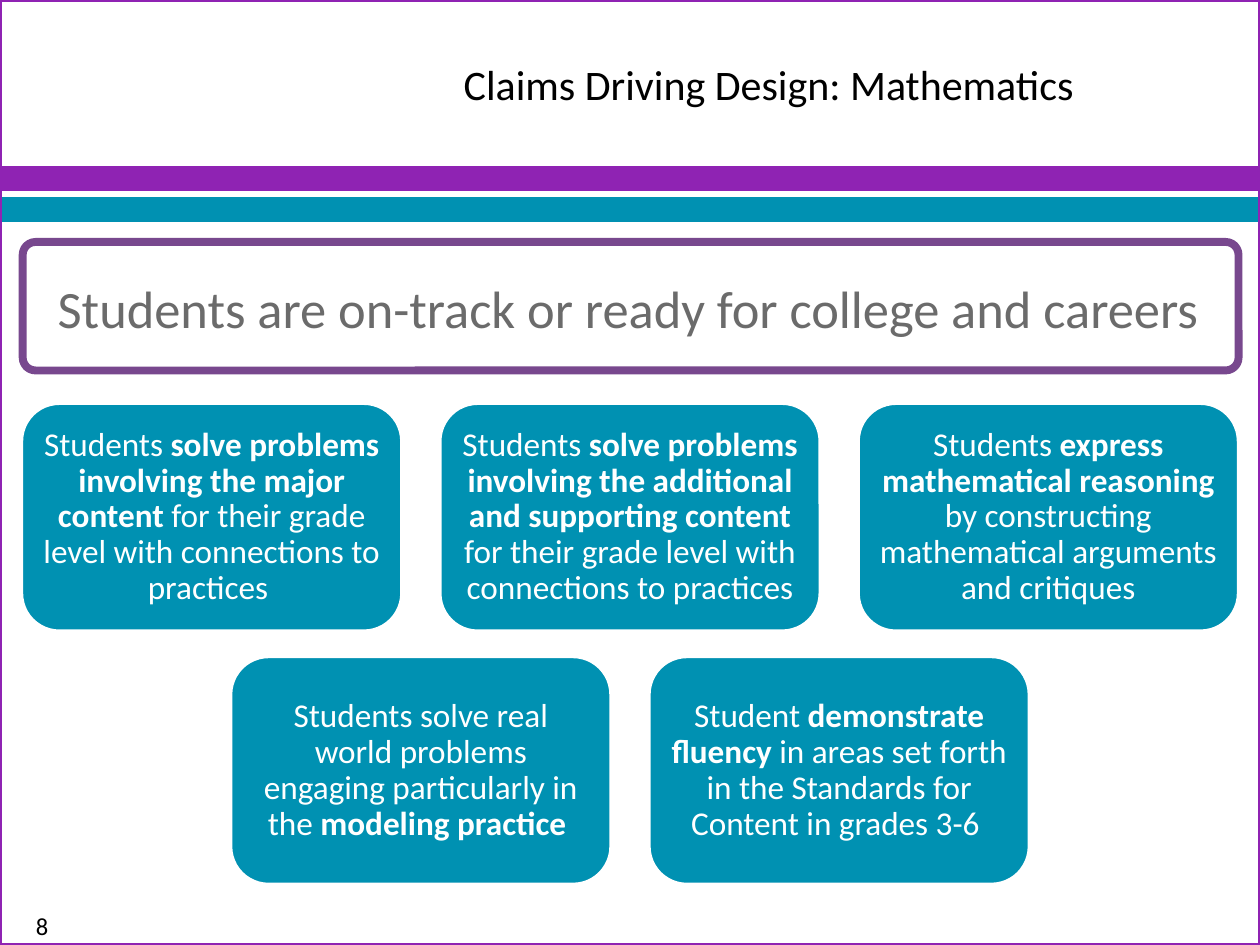
import pptx
import pptx.dml.color
import pptx.enum.shapes
import pptx.enum.text
import pptx.util

WIDTH, HEIGHT = 10, 7.5
PURPLE, TEAL, WHITE, BLACK = "8F23B3", "0091B2", "FFFFFF", "000000"
CARD_WIDTH, CARD_HEIGHT = 3.02, 1.81
COLUMN_STEP, ROW_STEP = 3.32, 2.01
CARDS_TOP = 3.2

CLAIM_ROWS = [
    [
        "Students **solve problems involving the major content **"
        "for their grade level with connections to practices ",
        "Students **solve problems involving the additional and supporting content **"
        "for their grade level with connections to practices",
        "Students **express mathematical reasoning **"
        "by constructing mathematical arguments and critiques",
    ],
    [
        "Students solve real world problems engaging particularly in the **modeling practice **",
        "Student **demonstrate fluency **in areas set forth in the Standards for Content in grades 3-6 ",
    ],
]


def color(code):
    return pptx.dml.color.RGBColor.from_string(code)


def inches(*lengths):
    return [pptx.util.Inches(length) for length in lengths]


def write(box, text, size, ink, align="CENTER", anchor="MIDDLE", spacing=1.0,
          insets=(0.1, 0.05, 0.1, 0.05)):
    frame = box.text_frame
    frame.word_wrap = True
    frame.vertical_anchor = pptx.enum.text.MSO_ANCHOR[anchor]
    (frame.margin_left, frame.margin_top,
     frame.margin_right, frame.margin_bottom) = inches(*insets)
    paragraph = frame.paragraphs[0]
    paragraph.alignment = pptx.enum.text.PP_ALIGN[align]
    paragraph.line_spacing = spacing
    for index, part in enumerate(text.split("**")):
        if part:
            run = paragraph.add_run()
            run.text = part
            run.font.name = "Calibri"
            run.font.size = pptx.util.Pt(size)
            run.font.bold = index % 2 == 1
            run.font.color.rgb = color(ink)


def add_panel(slide, kind, place, fill, line, line_width):
    panel = slide.shapes.add_shape(pptx.enum.shapes.MSO_SHAPE[kind], *inches(*place))
    panel.shadow.inherit = False
    if fill:
        panel.fill.solid()
        panel.fill.fore_color.rgb = color(fill)
    else:
        panel.fill.background()
    panel.line.color.rgb = color(line)
    panel.line.width = pptx.util.Pt(line_width)
    return panel


def add_label(slide, place, text, **style):
    write(slide.shapes.add_textbox(*inches(*place)), text, **style)


def add_frame(slide):
    for top, tint in ((1.33, PURPLE), (1.58, TEAL)):
        add_panel(slide, "RECTANGLE", (0, top, WIDTH, 0.17), tint, tint, 2)
    add_panel(slide, "RECTANGLE", (0, 0, WIDTH, HEIGHT), None, PURPLE, 2.25)


def add_claims(slide):
    for row, claims in enumerate(CLAIM_ROWS):
        row_width = COLUMN_STEP * (len(claims) - 1) + CARD_WIDTH
        row_left = (WIDTH - row_width) / 2
        for column, claim in enumerate(claims):
            place = (row_left + column * COLUMN_STEP, CARDS_TOP + row * ROW_STEP,
                     CARD_WIDTH, CARD_HEIGHT)
            card = add_panel(slide, "ROUNDED_RECTANGLE", place, TEAL, WHITE, 2)
            write(card, claim, size=19, ink=WHITE, spacing=0.9, insets=(0.08,) * 4)


def add_goal(slide):
    goal = add_panel(slide, "ROUNDED_RECTANGLE", (0.18, 1.92, 9.65, 1.02),
                     WHITE, "78488E", 4.5)
    goal.adjustments[0] = 0.1
    write(goal, "Students are on-track or ready for college and careers ",
          size=30, ink="6B6B6B", spacing=0.9, insets=(0.15, 0.12, 0.09, 0.03))


def main():
    deck = pptx.Presentation()
    deck.slide_width, deck.slide_height = inches(WIDTH, HEIGHT)
    slide = deck.slides.add_slide(deck.slide_layouts[6])
    add_frame(slide)
    add_claims(slide)
    add_label(slide, (3.08, 0, 6.92, 1.33), "Claims Driving Design: Mathematics",
              size=24, ink=BLACK, align="LEFT", insets=(0.6, 0.05, 0.1, 0.05))
    add_goal(slide)
    add_label(slide, (0, 7.18, 0.67, 0.32), "8", size=14, ink=BLACK, anchor="TOP")
    deck.save("out.pptx")


if __name__ == "__main__":
    main()
